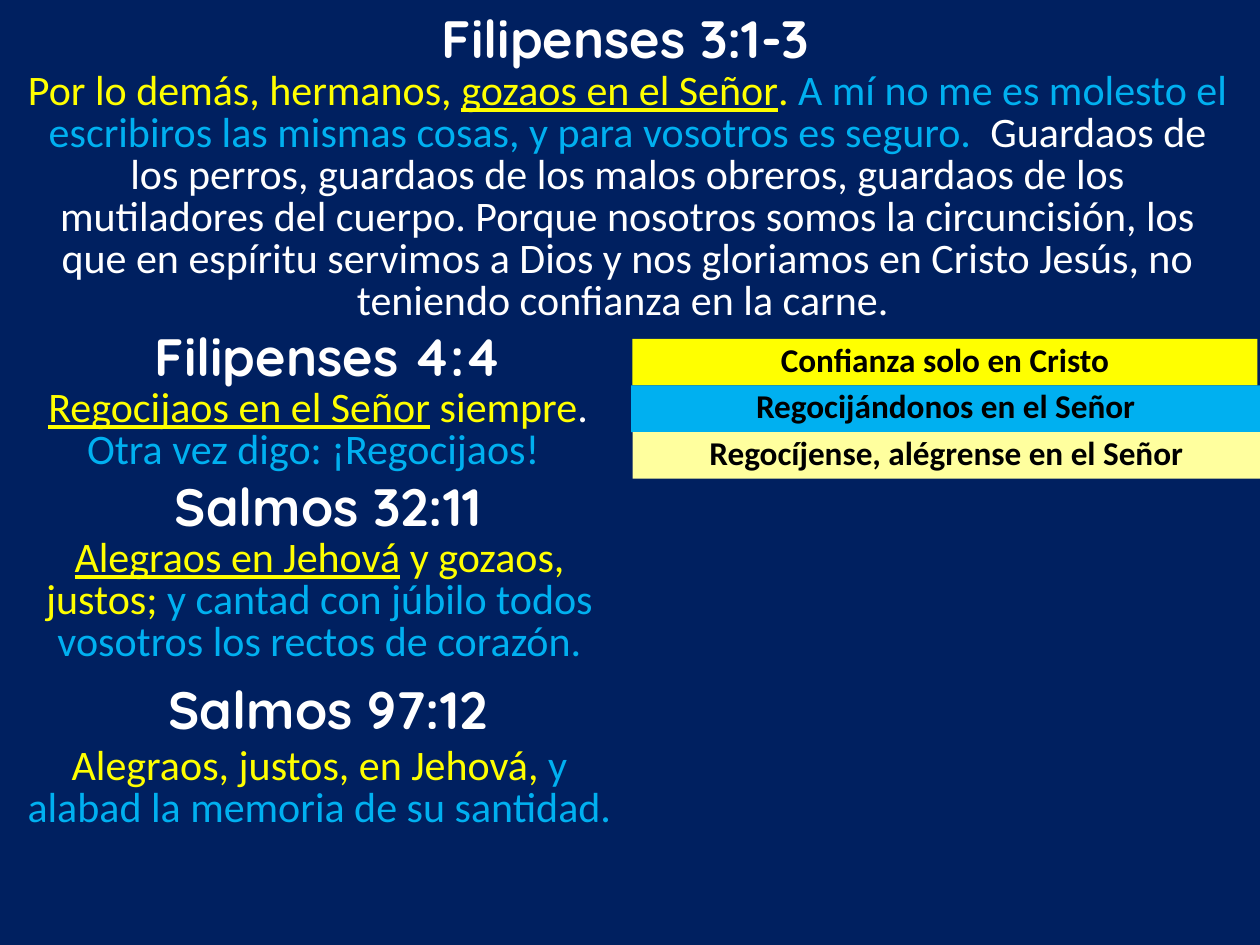
import pptx
import pptx.dml.color
import pptx.enum.shapes
import pptx.enum.text
import pptx.util
from dataclasses import dataclass


@dataclass(frozen=True)
class Theme:
    navy: str = "002060"
    white: str = "FFFFFF"
    black: str = "000000"
    yellow: str = "FFFF00"
    blue: str = "00B0F0"
    cream: str = "FFFF9E"
    heading_font: str = "Quicksand"
    body_font: str = "Calibri"
    heading_size: int = 30
    verse_size: int = 24
    banner_size: int = 19


def rgb(value):
    return pptx.dml.color.RGBColor.from_string(value)


class Deck:
    COLS, ROWS = 100, 75

    def __init__(self, theme):
        self.theme = theme
        self.prs = pptx.Presentation()
        self.prs.slide_width = pptx.util.Inches(10)
        self.prs.slide_height = pptx.util.Inches(7.5)
        self.s = self.prs.slides.add_slide(self.prs.slide_layouts[6])
        fill = self.s.background.fill
        fill.solid()
        fill.fore_color.rgb = rgb(theme.navy)

    def box(self, left, top, width, height):
        col = self.prs.slide_width / self.COLS
        row = self.prs.slide_height / self.ROWS
        return int(left * col), int(top * row), int(width * col), int(height * row)

    def set_text(self, sp, runs, font, size, bold=False, spacing=None):
        tf = sp.text_frame
        tf.word_wrap = True
        tf.auto_size = pptx.enum.text.MSO_AUTO_SIZE.SHAPE_TO_FIT_TEXT
        p = tf.paragraphs[0]
        p.alignment = pptx.enum.text.PP_ALIGN.CENTER
        if spacing:
            p.line_spacing = pptx.util.Pt(spacing)
        p.font.name = font
        p.font.size = pptx.util.Pt(size)
        p.font.bold = bold
        for text, color, *underline in runs:
            r = p.add_run()
            r.text = text
            r.font.color.rgb = rgb(color)
            if underline:
                r.font.underline = True

    def heading(self, text, top, left=2.8):
        sp = self.s.shapes.add_textbox(*self.box(left, top, 46.5, 6.1))
        t = self.theme
        self.set_text(sp, [(text, t.white)], t.heading_font, t.heading_size, bold=True)

    def verse(self, runs, top, height, left=0.4, width=49.9):
        sp = self.s.shapes.add_textbox(*self.box(left, top, width, height))
        t = self.theme
        self.set_text(sp, runs, t.body_font, t.verse_size, spacing=t.verse_size)

    def banner(self, text, color, left, top, width):
        sp = self.s.shapes.add_shape(
            pptx.enum.shapes.MSO_SHAPE.RECTANGLE, *self.box(left, top, width, 3.7))
        sp.shadow.inherit = False
        sp.fill.solid()
        sp.fill.fore_color.rgb = rgb(color)
        sp.line.fill.background()
        t = self.theme
        self.set_text(sp, [(text, t.black)], t.body_font, t.banner_size,
                      bold=True, spacing=t.banner_size)


def main():
    t = Theme()
    deck = Deck(t)

    deck.heading("Filipenses 3:1-3", 0, left=26.4)
    deck.verse([
        ("Por lo demás, hermanos, ", t.yellow),
        ("gozaos en el Señor", t.yellow, True),
        (". ", t.yellow),
        ("A mí no me es molesto el escribiros las mismas cosas, "
         "y para vosotros es seguro.  ", t.blue),
        ("Guardaos de los perros, guardaos de los malos obreros, guardaos de los "
         "mutiladores del cuerpo. Porque nosotros somos la circuncisión, los que en "
         "espíritu servimos a Dios y nos gloriamos en Cristo Jesús, no teniendo "
         "confianza en la carne. ", t.white),
    ], 5.2, 21.3, left=1.2, width=97.2)

    banners = [
        ("Confianza solo en Cristo", t.yellow, 50.2, 49.6),
        ("Regocijándonos en el Señor", t.blue, 50.1, 49.9),
        ("Regocíjense, alégrense en el Señor", t.cream, 50.2, 49.8),
    ]
    for i, (text, color, left, width) in enumerate(banners):
        deck.banner(text, color, left, 26.9 + 3.7 * i, width)

    deck.heading("Filipenses 4:4", 25.2)
    deck.verse([
        ("Regocijaos en el Señor", t.yellow, True),
        (" siempre", t.yellow),
        (". ", t.white),
        ("Otra vez digo: ¡Regocijaos! ", t.blue),
    ], 30.4, 7.8, left=0.3)

    deck.heading("Salmos 32:11", 37.1)
    deck.verse([
        ("Alegraos en Jehová", t.yellow, True),
        (" y gozaos, justos; ", t.yellow),
        ("y cantad con júbilo todos vosotros los rectos de corazón.", t.blue),
    ], 42.3, 11.2)

    deck.heading("Salmos 97:12", 53.2)
    deck.verse([
        ("Alegraos, justos, en Jehová, ", t.yellow),
        ("y alabad la memoria de su santidad.", t.blue),
    ], 58.8, 7.8)

    deck.prs.save("out.pptx")


if __name__ == "__main__":
    main()
